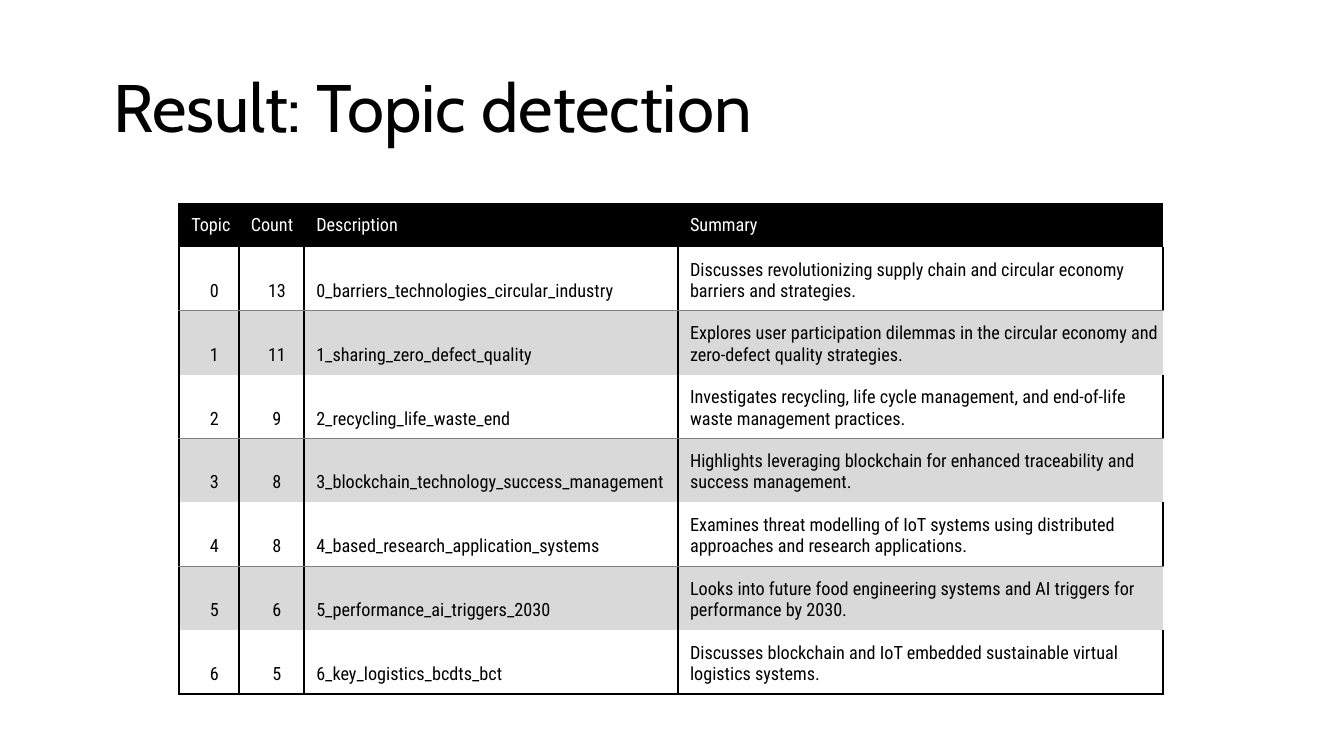
from lxml import etree
from pptx import Presentation
from pptx.dml.color import RGBColor
from pptx.enum.text import MSO_ANCHOR as Anchor, MSO_AUTO_SIZE as AutoSize, PP_ALIGN as Align
from pptx.oxml.ns import qn
from pptx.util import Cm, Pt

BLACK, WHITE, GREY, BAND = "000000", "FFFFFF", "808080", "D9D9D9"
THICK, THIN = (BLACK, 1.5), (GREY, 0.5)


def rgb(color):
    return RGBColor.from_string(color)


def set_borders(cell, borders):
    """Draw the given sides (L, R, T, B) as (colour, points); hide the others."""
    properties = cell._tc.get_or_add_tcPr()
    for side in "LRTB":
        line = etree.SubElement(properties, qn(f"a:ln{side}"))
        if side in borders:
            color, points = borders[side]
            line.set("w", str(Pt(points)))
            fill = etree.SubElement(line, qn("a:solidFill"))
            etree.SubElement(fill, qn("a:srgbClr"), val=color)
        else:
            etree.SubElement(line, qn("a:noFill"))


topics = [
    ("Topic", "Count", "Description", "Summary"),
    ("0", "13", "0_barriers_technologies_circular_industry",
     "Discusses revolutionizing supply chain and circular economy barriers and strategies."),
    ("1", "11", "1_sharing_zero_defect_quality",
     "Explores user participation dilemmas in the circular economy and zero-defect quality strategies."),
    ("2", "9", "2_recycling_life_waste_end",
     "Investigates recycling, life cycle management, and end-of-life waste management practices."),
    ("3", "8", "3_blockchain_technology_success_management",
     "Highlights leveraging blockchain for enhanced traceability and success management."),
    ("4", "8", "4_based_research_application_systems",
     "Examines threat modelling of IoT systems using distributed approaches and research applications."),
    ("5", "6", "5_performance_ai_triggers_2030",
     "Looks into future food engineering systems and AI triggers for performance by 2030."),
    ("6", "5", "6_key_logistics_bcdts_bct",
     "Discusses blockchain and IoT embedded sustainable virtual logistics systems."),
]
column_widths = [1.5, 1.65, 9.42, 12.22]
header_height, topic_height = 1.09, 1.61
last_row, last_column = len(topics) - 1, len(column_widths) - 1

presentation = Presentation()
presentation.slide_width, presentation.slide_height = Cm(33.87), Cm(19.05)
slide = presentation.slides.add_slide(presentation.slide_layouts[5])

title = slide.shapes.title
title.left, title.top, title.width, title.height = Cm(2.34), Cm(0.97), Cm(17.12), Cm(3.63)
title.text_frame.text = "Result: Topic detection"
title.text_frame.auto_size = AutoSize.NONE
title.text_frame.vertical_anchor = Anchor.MIDDLE
heading = title.text_frame.paragraphs[0]
heading.alignment = Align.CENTER
heading.line_spacing = 0.9
heading.font.name, heading.font.size = "Cabin", Pt(48)
heading.font.color.rgb = rgb(BLACK)

table = slide.shapes.add_table(
    len(topics), len(column_widths), Cm(4.52), Cm(5.13),
    Cm(sum(column_widths)), Cm(header_height + last_row * topic_height)).table
table.horz_banding = False
for column, width in zip(table.columns, column_widths):
    column.width = Cm(width)

for r, topic in enumerate(topics):
    is_header, is_band = r == 0, r > 0 and r % 2 == 0
    table.rows[r].height = Cm(header_height if is_header else topic_height)
    for c, text in enumerate(topic):
        cell = table.cell(r, c)
        if is_header:
            borders = {"T": THICK, "L": THICK} if c == 0 else {"T": THICK}
        elif is_band:
            borders = {"L": THICK, "T": THIN}
            if c < last_column:
                borders["R"] = THICK
        else:
            borders = {"L": THICK, "R": THICK, "B": THICK if r == last_row else THIN}
        set_borders(cell, borders)
        if is_header or is_band:
            cell.fill.solid()
            cell.fill.fore_color.rgb = rgb(BLACK if is_header else BAND)
        else:
            cell.fill.background()

        cell.margin_left, cell.margin_right = Cm(0.3), Cm(0.03)
        cell.margin_top = cell.margin_bottom = Cm(0.23)
        cell.vertical_anchor = Anchor.MIDDLE if is_header else Anchor.BOTTOM
        cell.text = text
        paragraph = cell.text_frame.paragraphs[0]
        paragraph.alignment = Align.CENTER if c < 2 and not is_header else Align.LEFT
        paragraph.font.name, paragraph.font.size = "Roboto Condensed", Pt(13)
        paragraph.font.bold = False
        paragraph.font.color.rgb = rgb(WHITE if is_header else BLACK)

presentation.save("out.pptx")
